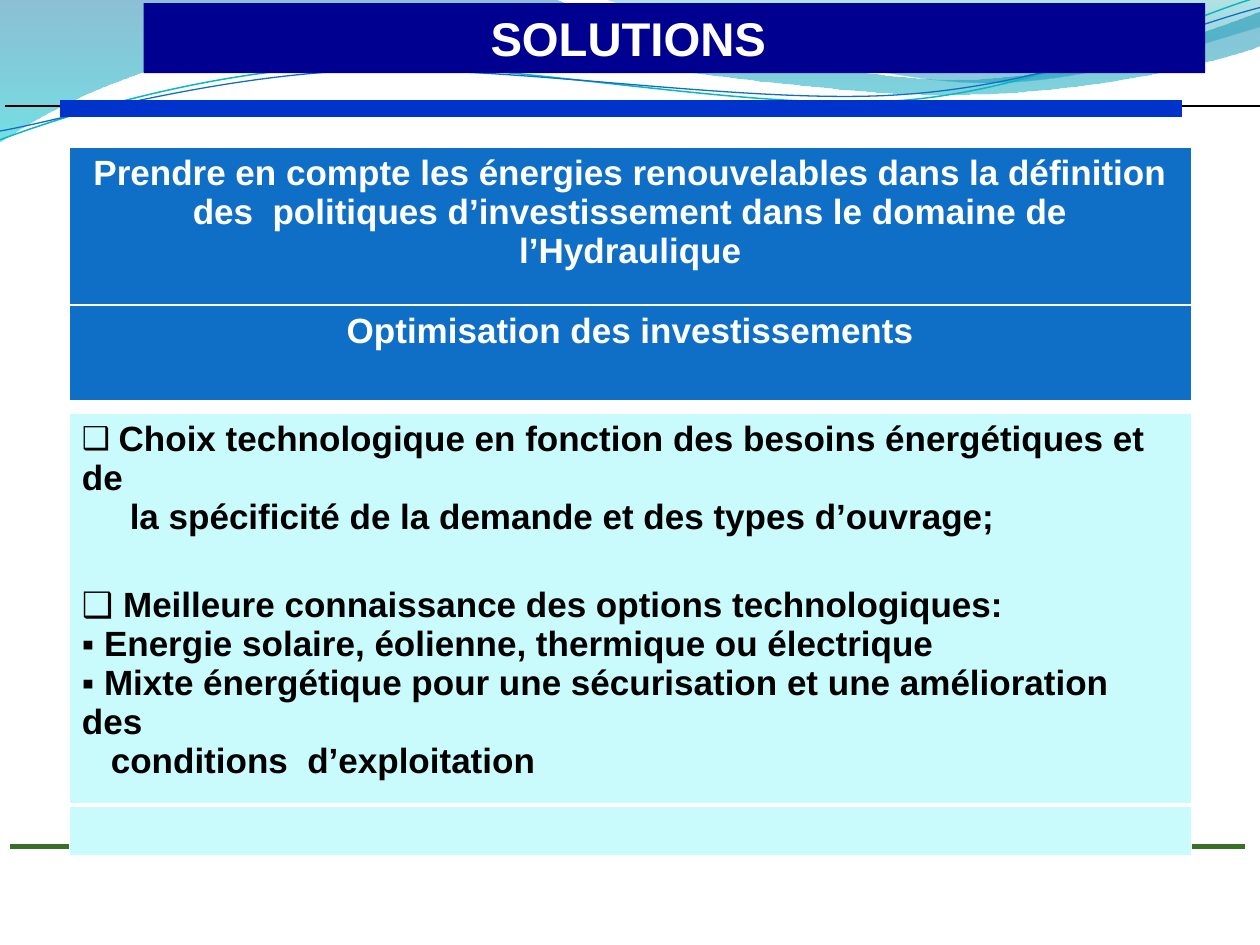
"""Build the SOLUTIONS slide: wave header, rules, three one-column tables and a title bar."""
from lxml.etree import SubElement
from pptx import Presentation
from pptx.dml.color import RGBColor
from pptx.enum.shapes import MSO_CONNECTOR, MSO_SHAPE
from pptx.enum.text import MSO_ANCHOR, PP_ALIGN
from pptx.oxml import parse_xml
from pptx.oxml.ns import nsdecls, qn
from pptx.util import Inches, Pt

WHITE = RGBColor(0xFF, 0xFF, 0xFF)
BLACK = RGBColor(0x00, 0x00, 0x00)
NAVY = RGBColor(0x00, 0x00, 0x90)
ROYAL = RGBColor(0x00, 0x33, 0xCC)
BLUE = RGBColor(0x0F, 0x6F, 0xC6)
AQUA = RGBColor(0x0A, 0xB8, 0xBF)
GREEN = RGBColor(0x38, 0x70, 0x26)
PALE = RGBColor(0xC9, 0xFA, 0xFC)
SEA = RGBColor(0x00, 0x74, 0xA1)
TURQUOISE = RGBColor(0x00, 0xC6, 0xCF)
TEAL = RGBColor(0x00, 0xA1, 0xA9)
AZURE = RGBColor(0x00, 0x8B, 0xBF)
FONT = "Arial"

presentation = Presentation()
presentation.slide_width = Inches(10)
presentation.slide_height = Inches(7.5)
CELL = presentation.slide_width / 100
slide = presentation.slides.add_slide(presentation.slide_layouts[6])
shapes = slide.shapes


def grid(*counts):
    return [round(count * CELL) for count in counts]


def add_wave(start, segments, closed):
    builder = shapes.build_freeform(*grid(*start), scale=1.0)
    for segment in segments:
        corners = list(zip(segment[::2], segment[1::2]))
        builder.add_line_segments([grid(*corner) for corner in corners], close=False)
    if closed:
        builder.add_line_segments([], close=True)
    wave = builder.convert_to_shape()
    wave.shadow.inherit = False
    steps = iter(list(wave._element.iter(qn("a:lnTo"))))
    for segment in segments:
        step = next(steps)
        if len(segment) == 6:
            step.tag = qn("a:cubicBezTo")
            for follower in (next(steps), next(steps)):
                step.append(follower[0])
                follower.getparent().remove(follower)
    return wave


filled_waves = [
    ((0, 0), [(44, -0.1), (47.6, 1.7, 66.4, 6.3, 75.8, 6.3), (85.3, 6.3, 95.8, 2.6, 100, 0.9),
              (100.1, 3.6), (98.3, 4.4, 87, 7.6, 74.6, 7.5), (62.2, 7.5, 38.2, 2.8, 25.7, 3.4),
              (12.9, 3.6, 4.6, 8.3, -0.1, 11.3)],
     [(0, SEA, 45), (1, TURQUOISE, 55)]),
    ((47.9, -0.1), [(50.9, 1.1, 68.2, 6.2, 76.9, 6.5), (85.6, 6.9, 96.1, 3.2, 100, 2.1), (100, 0)],
     [(0, TEAL, 30), (0.8, AZURE, 45)]),
]
for start, segments, stops in filled_waves:
    wave = add_wave(start, segments, True)
    wave.line.fill.background()
    wave.fill.gradient()
    wave.fill.gradient_angle = 270
    for stop, (position, color, opacity) in zip(wave.fill.gradient_stops, stops):
        stop.position = position
        stop.color.rgb = color
    for element, (position, color, opacity) in zip(wave._element.spPr.iter(qn("a:srgbClr")), stops):
        SubElement(element, qn("a:alpha"), val=str(opacity * 1000))

line_waves = [
    ((0, 11.1), [(4.8, 9.3, 15.8, 5.7, 27.7, 5.2), (39.5, 4.7, 59.3, 8.9, 71.3, 8),
                 (83.3, 7.1, 93.8, 1.5, 99.8, -0.2)], AQUA, 0.85),
    ((0, 10.4), [(4.7, 9.6, 16.4, 6.1, 28.3, 5.6), (40.3, 5.1, 59.7, 8.4, 71.7, 7.5),
                 (83.6, 6.7, 94.1, 2.1, 100, 0.6)], BLUE, 0.75),
]
for start, segments, color, width in line_waves:
    wave = add_wave(start, segments, False)
    wave.fill.background()
    wave.line.color.rgb = color
    wave.line.width = Pt(width)

rules = [(0.4, 100, 8.4, BLACK, 1), (0.8, 98.8, 67.2, GREEN, 3), (4.8, 93.8, 8.6, ROYAL, 10)]
for left, right, row, color, width in rules:
    rule = shapes.add_connector(MSO_CONNECTOR.STRAIGHT, *grid(left, row, right, row))
    rule.line.color.rgb = color
    rule.line.width = Pt(width)
    SubElement(rule._element.spPr, qn("a:effectLst"))

heading = ("Prendre en compte les énergies renouvelables dans la définition des  politiques "
           "d’investissement dans le domaine de l’Hydraulique")
choices = [
    ("❑", [" ", "Choix technologique en fonction des besoins énergétiques et de"], 0, 0),
    (None, ["la spécificité de la demande et des types d’ouvrage;"], 3.8, 0),
    ("❑", [" Meilleure connaissance des options technologiques:"], 0, 28),
    ("▪", [" Energie solaire, éolienne, thermique ou électrique"], 0, 0),
    ("▪", [" Mixte énergétique pour une sécurisation et une amélioration des"], 0, 0),
    (None, ["conditions  d’exploitation"], 2.3, 0),
]
tables = [
    (11.7, [12.6], BLUE, WHITE, PP_ALIGN.CENTER, [(None, [heading], 0, 0)]),
    (32.8, [31.1, 3.8], PALE, BLACK, PP_ALIGN.LEFT, choices),
    (24.25, [7.7], BLUE, WHITE, PP_ALIGN.CENTER,
     [(None, ["Optimisation des investissements"], 0, 0)]),
]
for top, heights, fill, color, alignment, lines in tables:
    table = shapes.add_table(len(heights), 1, *grid(5.5, top, 89.05, sum(heights))).table
    table.first_row = table.horz_banding = False
    for index, height in enumerate(heights):
        table.rows[index].height = grid(height)[0]
        cell = table.cell(index, 0)
        cell.fill.solid()
        cell.fill.fore_color.rgb = fill
        above, below = (3, 1) if index else (1, 3)
        borders = [("lnL", 1), ("lnR", 1), ("lnT", above), ("lnB", below)]
        for place, (side, width) in enumerate(borders):
            cell._tc.get_or_add_tcPr().insert(place, parse_xml(
                f'<a:{side} {nsdecls("a")} w="{Pt(width)}"><a:solidFill>'
                f'<a:srgbClr val="{WHITE}"/></a:solidFill></a:{side}>'))
    frame = table.cell(0, 0).text_frame
    for number, (bullet, runs, indent, space) in enumerate(lines):
        paragraph = frame.add_paragraph() if number else frame.paragraphs[0]
        properties = paragraph._p.get_or_add_pPr()
        properties.set("marL", str(grid(indent)[0]))
        properties.set("indent", "0")
        if bullet:
            SubElement(properties, qn("a:buFont"), typeface=FONT)
            SubElement(properties, qn("a:buChar"), char=bullet)
        if space:
            paragraph.space_before = Pt(space)
        paragraph.alignment = alignment
        paragraph.font.name = FONT
        paragraph.font.size = Pt(20)
        paragraph.font.bold = True
        paragraph.font.color.rgb = color
        for text in runs:
            run = paragraph.add_run()
            run.text = text
            if text == " ":
                run.font.size = Pt(18)

title = shapes.add_shape(MSO_SHAPE.RECTANGLE, *grid(11.4, 0.25, 84.25, 5.55))
title.shadow.inherit = False
title.fill.solid()
title.fill.fore_color.rgb = NAVY
title.line.fill.background()
frame = title.text_frame
frame.word_wrap = True
frame.vertical_anchor = MSO_ANCHOR.MIDDLE
frame.margin_right = grid(8.3)[0]
paragraph = frame.paragraphs[0]
paragraph.text = "SOLUTIONS"
paragraph.alignment = PP_ALIGN.CENTER
paragraph.font.name = FONT
paragraph.font.size = Pt(27)
paragraph.font.bold = True
paragraph.font.color.rgb = WHITE

presentation.save("out.pptx")
